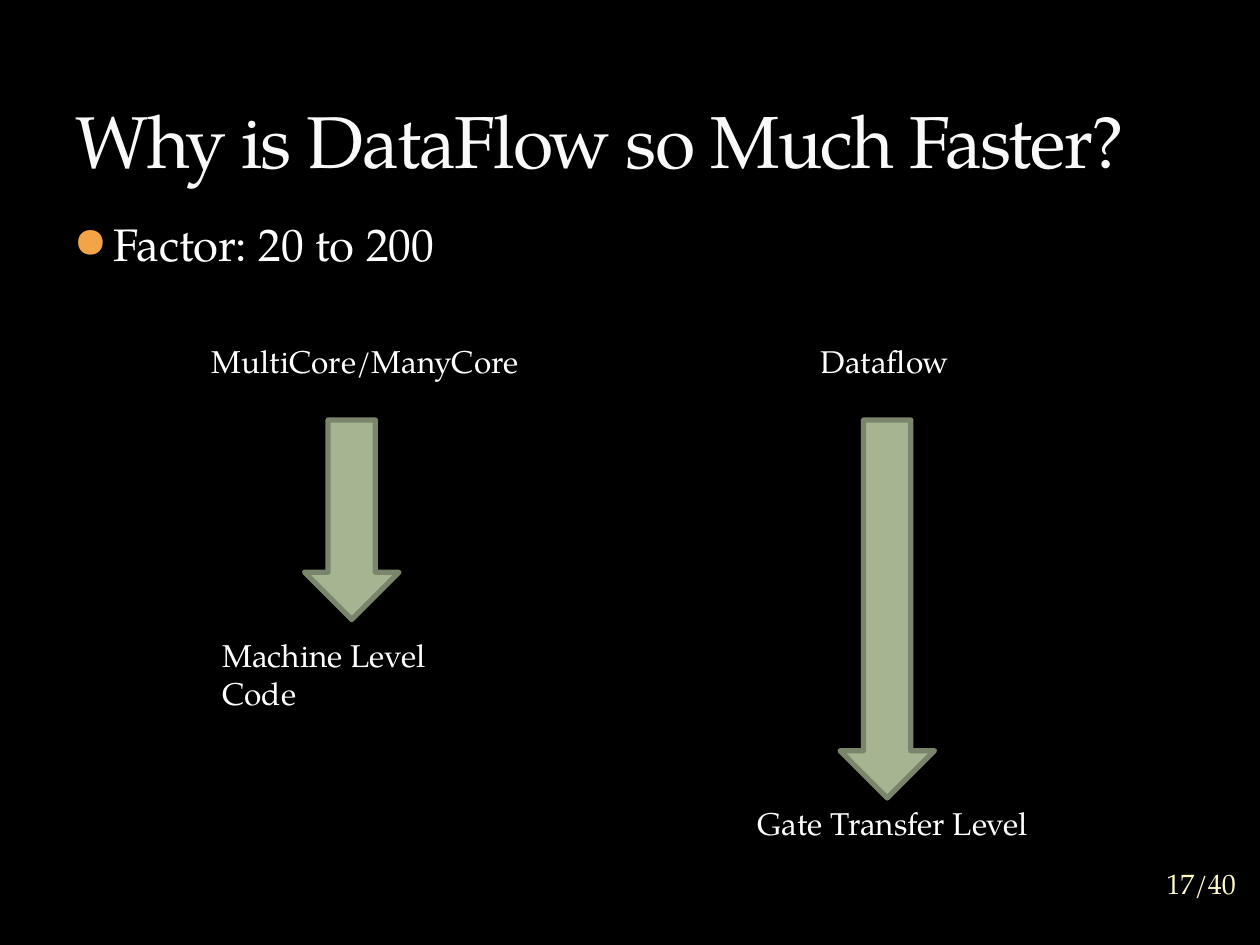
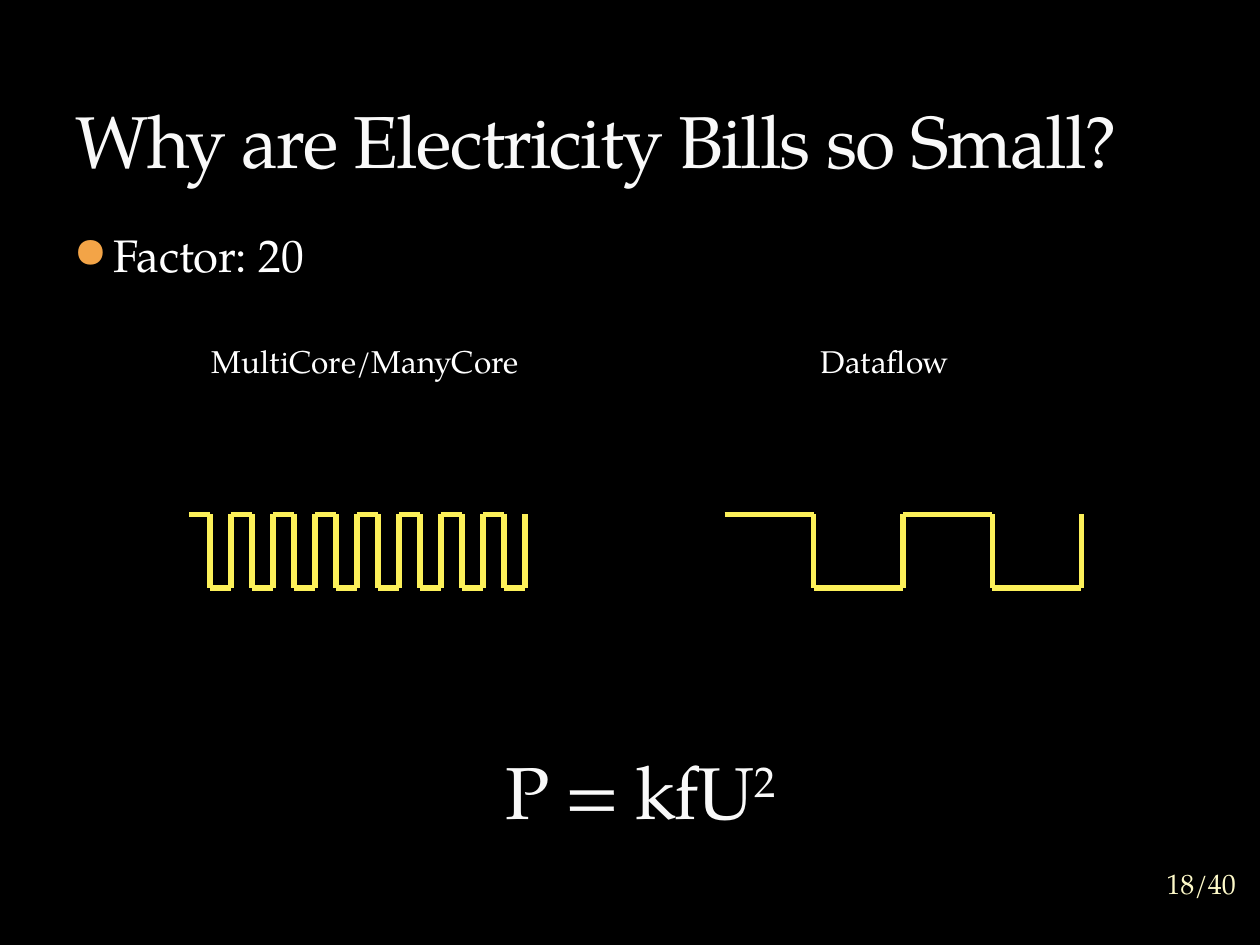
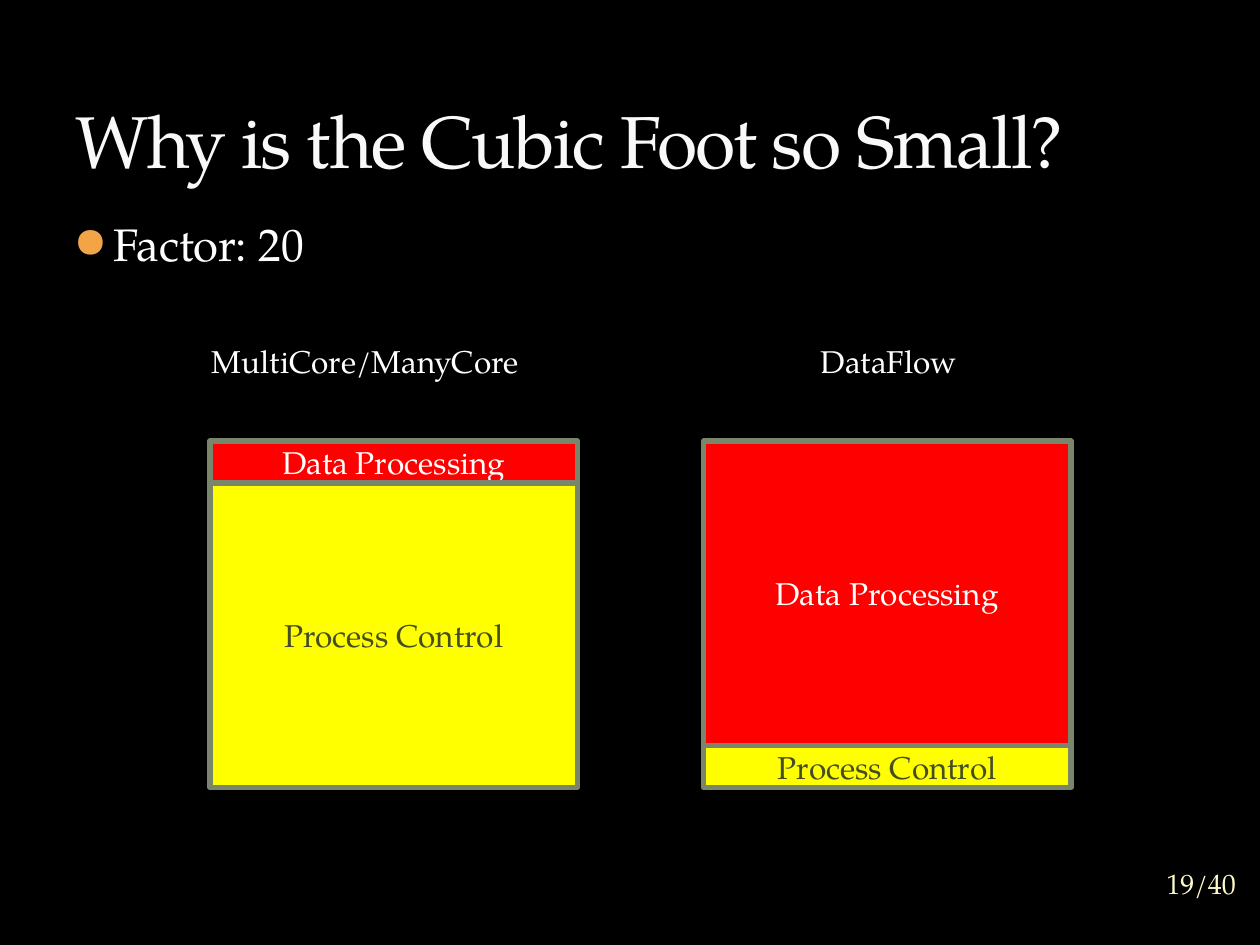
from lxml import etree
from pptx import Presentation
from pptx.dml.color import RGBColor
from pptx.enum.shapes import MSO_CONNECTOR, MSO_SHAPE
from pptx.enum.text import MSO_ANCHOR, MSO_AUTO_SIZE, PP_ALIGN
from pptx.oxml.ns import qn
from pptx.util import Pt

# Constants
STRAIGHT = MSO_CONNECTOR.STRAIGHT
RECT, DOWN_ARROW = MSO_SHAPE.RECTANGLE, MSO_SHAPE.DOWN_ARROW
TOP, MIDDLE, BOTTOM = MSO_ANCHOR.TOP, MSO_ANCHOR.MIDDLE, MSO_ANCHOR.BOTTOM
LEFT, CENTER = PP_ALIGN.LEFT, PP_ALIGN.CENTER
GROW = MSO_AUTO_SIZE.SHAPE_TO_FIT_TEXT

SCALE = 7620  # EMU per px, 120 px to the inch
WIDTH, HEIGHT = 1200, 900
FONT = "TeX Gyre Pagella"
BLACK, WHITE, RED, YELLOW = "000000", "FFFFFF", "FF0000", "FFFF00"
HEADING, HEADING_EDGE, FOOTER = "F9F9F9", "3C4422", "FEFAC9"
BULLET, SAGE, SAGE_EDGE = "F3A447", "A5B592", "7A866C"
OLIVE, SIGNAL = "444D26", "FCF059"
PAGES = 40


def px(length):
    return length * SCALE


def rgb(value):
    return RGBColor.from_string(value)


def add_xml(parent, tag, **attributes):
    return etree.SubElement(parent, qn(tag), attributes)


class Deck:
    """Holds the shared style and the current slide."""

    def __init__(self):
        self.prs = Presentation()
        self.prs.slide_width, self.prs.slide_height = px(WIDTH), px(HEIGHT)
        self.slide = None

    def start(self, title, factor, factor_top, page):
        self.slide = self.prs.slides.add_slide(self.prs.slide_layouts[6])
        fill = self.slide.background.fill
        fill.solid()
        fill.fore_color.rgb = rgb(BLACK)
        self.bullet(factor, factor_top)
        self.heading(title, 60, 20)
        self.text(f"{page}/{PAGES}", 1104, 811, 80, 60, size=16, color=FOOTER,
                  align=CENTER, anchor=MIDDLE, inset=0)

    def fill_frame(self, frame, text, size=18, color=WHITE, align=LEFT, anchor=TOP):
        frame.word_wrap = True
        frame.vertical_anchor = anchor
        paragraph = frame.paragraphs[0]
        paragraph.alignment = align
        self.run(paragraph, text, size, color)

    def run(self, paragraph, text, size, color):
        run = paragraph.add_run()
        run.text = text
        for name, value in {"name": FONT, "size": Pt(size)}.items():
            setattr(run.font, name, value)
        run.font.color.rgb = rgb(color)
        return run

    def text(self, text, x, y, w, h, inset=None, **style):
        frame = self.slide.shapes.add_textbox(px(x), px(y), px(w), px(h)).text_frame
        if inset is not None:
            for side in ("left", "top", "right", "bottom"):
                setattr(frame, f"margin_{side}", px(inset))
        self.fill_frame(frame, text, **style)
        return frame

    def label(self, text, x, y, w):
        self.text(text, x, y, w, 48).auto_size = GROW

    def column_labels(self, left, right):
        self.label(left, 190, 320, 320)
        self.label(right, 770, 320, 180)

    def heading(self, text, x, y, align=LEFT, superscript=""):
        size, color = 42, HEADING
        frame = self.text(text, x, y, 1080, 160, size=size, color=color,
                          align=align, anchor=BOTTOM)
        paragraph = frame.paragraphs[0]
        if superscript:
            raised = self.run(paragraph, superscript, size, color)
            raised.font._element.set("baseline", "30000")
        # Tight spacing and a faint outline
        for run in paragraph.runs:
            properties = run.font._element
            properties.set("spc", "-100")
            outline = add_xml(properties, "a:ln", w="3175")
            edge = add_xml(add_xml(outline, "a:solidFill"), "a:srgbClr", val=HEADING_EDGE)
            add_xml(edge, "a:alpha", val="25000")
            properties.insert(0, outline)

    def bullet(self, text, y):
        paragraph = self.text(text, 60, y, 1080, 80, size=26).paragraphs[0]
        paragraph.space_before = Pt(6)
        properties = paragraph._p.get_or_add_pPr()
        for name, value in {"marL": px(36), "indent": px(-36)}.items():
            properties.set(name, str(value))
        add_xml(add_xml(properties, "a:buClr"), "a:srgbClr", val=BULLET)
        add_xml(properties, "a:buSzPct", val="85000")
        add_xml(properties, "a:buFont", typeface=FONT)
        add_xml(properties, "a:buChar", char="●")

    def shape(self, kind, x, y, w, h, fill):
        shape = self.slide.shapes.add_shape(kind, px(x), px(y), px(w), px(h))
        shape.shadow.inherit = False
        shape.fill.solid()
        shape.fill.fore_color.rgb = rgb(fill)
        shape.line.color.rgb = rgb(SAGE_EDGE)
        shape.line.width = Pt(3)
        return shape

    def block(self, text, x, y, h, fill, color):
        frame = self.shape(RECT, x, y, 350, h, fill).text_frame
        self.fill_frame(frame, text, color=color, align=CENTER, anchor=MIDDLE)

    def wave(self, x, periods, half_period, high=490, low=560):
        points = []
        for period in range(periods):
            start = x + 2 * period * half_period
            middle = start + half_period
            points += [(start, high), (middle, high), (middle, low), (middle + half_period, low)]
        points.append((x + 2 * periods * half_period, high))
        group = self.slide.shapes.add_group_shape()
        for (x1, y1), (x2, y2) in zip(points, points[1:]):
            segment = group.shapes.add_connector(STRAIGHT, px(x1), px(y1), px(x2), px(y2))
            segment.line.color.rgb = rgb(SIGNAL)
            segment.line.width = Pt(3)
            add_xml(segment._element.spPr, "a:effectLst")


def main():
    deck = Deck()

    # Speed: depth of the compiled level
    deck.start("Why is DataFlow so Much Faster?", "Factor: 20 to 200", 200, 17)
    deck.column_labels("MultiCore/ManyCore", "Dataflow")
    deck.label("Machine Level Code", 200, 600, 290)
    deck.label("Gate Transfer Level", 710, 760, 300)
    for x, depth in ((290, 190), (800, 360)):
        deck.shape(DOWN_ARROW, x, 400, 90, depth, SAGE)

    # Power: clock frequency
    deck.start("Why are Electricity Bills so Small?", "Factor: 20", 210, 18)
    deck.column_labels("MultiCore/ManyCore", "Dataflow")
    deck.wave(180, periods=8, half_period=20)
    deck.wave(690, periods=2, half_period=85)
    deck.heading("P = kfU", 70, 640, align=CENTER, superscript="2")

    # Size: share of processing and control
    deck.start("Why is the Cubic Foot so Small?", "Factor: 20", 200, 19)
    deck.column_labels("MultiCore/ManyCore", "DataFlow")
    block_top, block_total = 420, 330
    for x, processing in ((200, 40), (670, 290)):
        deck.block("Data Processing", x, block_top, processing, RED, WHITE)
        deck.block("Process Control", x, block_top + processing,
                   block_total - processing, YELLOW, OLIVE)

    deck.prs.save("out.pptx")


if __name__ == "__main__":
    main()
